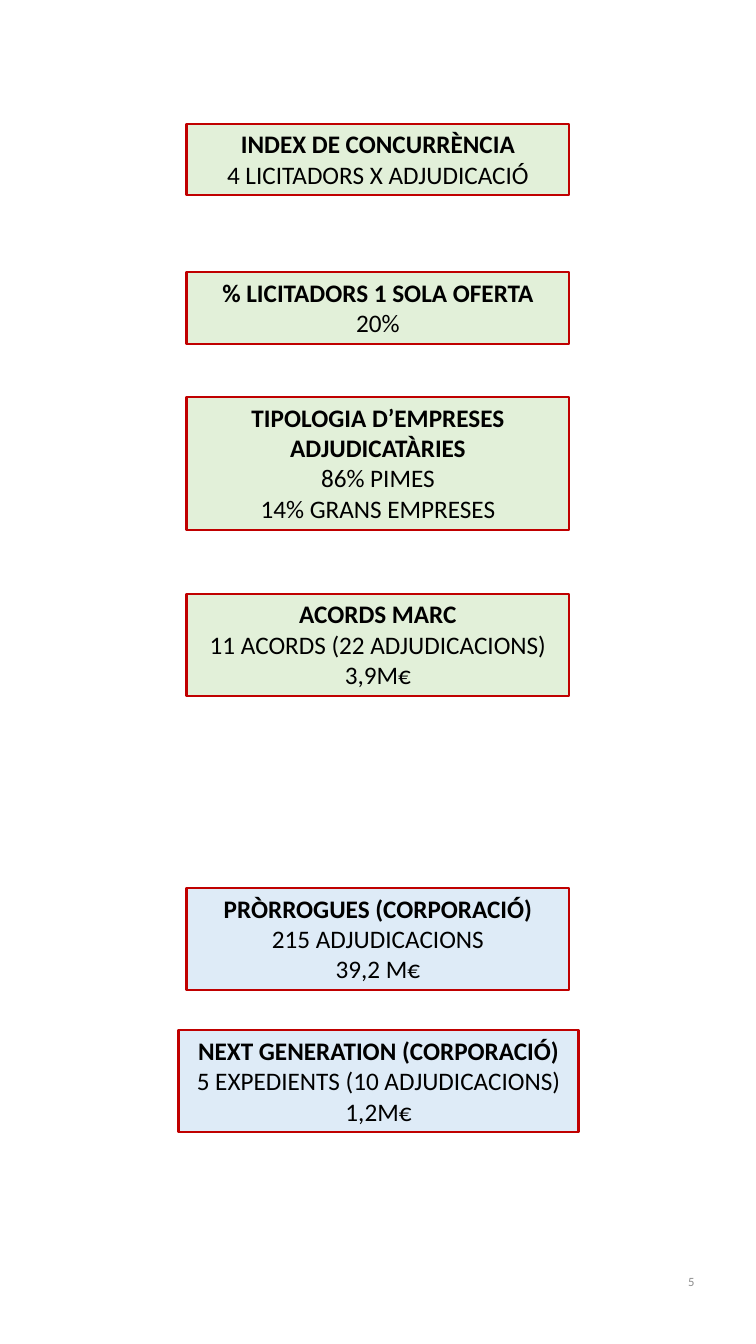
import pptx
import pptx.dml.color
import pptx.enum.shapes
import pptx.enum.text
import pptx.util
from pptx.util import Cm

GREEN, BLUE, RED = "E2F0D9", "DEEBF7", "C00000"
LINE_HEIGHT = 0.77
BOX_PADDING = 0.26


def colour(hex_string):
    return pptx.dml.color.RGBColor.from_string(hex_string)


def write(paragraph, text, size=18, bold=False, ink="000000", align="CENTER"):
    paragraph.alignment = pptx.enum.text.PP_ALIGN[align]
    run = paragraph.add_run()
    run.text = text
    run.font.name = "Calibri"
    run.font.size = pptx.util.Pt(size)
    run.font.bold = bold
    run.font.color.rgb = colour(ink)


presentation = pptx.Presentation()
presentation.slide_width = Cm(19.05)
presentation.slide_height = Cm(33.86)
slide = presentation.slides.add_slide(presentation.slide_layouts[6])

# Left, top, width, number of text lines, fill, heading, details
indicators = [
    (4.7, 3.12, 9.65, 2, GREEN, "INDEX DE CONCURRÈNCIA", ["4 LICITADORS X ADJUDICACIÓ"]),
    (4.7, 6.86, 9.65, 2, GREEN, "% LICITADORS 1 SOLA OFERTA", ["20%"]),
    (4.7, 10.01, 9.65, 4, GREEN, "TIPOLOGIA D’EMPRESES ADJUDICATÀRIES",
     ["86% PIMES", "14% GRANS EMPRESES"]),
    (4.7, 14.96, 9.65, 3, GREEN, "ACORDS MARC", ["11 ACORDS (22 ADJUDICACIONS)", "3,9M€"]),
    (4.7, 22.38, 9.65, 3, BLUE, "PRÒRROGUES (CORPORACIÓ)", ["215 ADJUDICACIONS", "39,2 M€"]),
    (4.5, 25.96, 10.08, 3, BLUE, "NEXT GENERATION (CORPORACIÓ)",
     ["5 EXPEDIENTS (10 ADJUDICACIONS)", "1,2M€"]),
]

for left, top, width, line_count, fill, heading, details in indicators:
    height = BOX_PADDING + LINE_HEIGHT * line_count
    box = slide.shapes.add_shape(pptx.enum.shapes.MSO_SHAPE.RECTANGLE,
                                 Cm(left), Cm(top), Cm(width), Cm(height))
    box.shadow.inherit = False
    box.fill.solid()
    box.fill.fore_color.rgb = colour(fill)
    box.line.color.rgb = colour(RED)
    box.line.width = pptx.util.Pt(1.5)
    frame = box.text_frame
    frame.word_wrap = True
    frame.auto_size = pptx.enum.text.MSO_AUTO_SIZE.SHAPE_TO_FIT_TEXT
    frame.vertical_anchor = pptx.enum.text.MSO_ANCHOR.TOP
    write(frame.paragraphs[0], heading, bold=True)
    for detail in details:
        write(frame.add_paragraph(), detail)

page_number = slide.shapes.add_textbox(Cm(13.46), Cm(31.39), Cm(4.29), Cm(1.8))
page_number.text_frame.word_wrap = True
page_number.text_frame.vertical_anchor = pptx.enum.text.MSO_ANCHOR.MIDDLE
write(page_number.text_frame.paragraphs[0], "5", size=9, ink="8C8C8C", align="RIGHT")

presentation.save("out.pptx")
